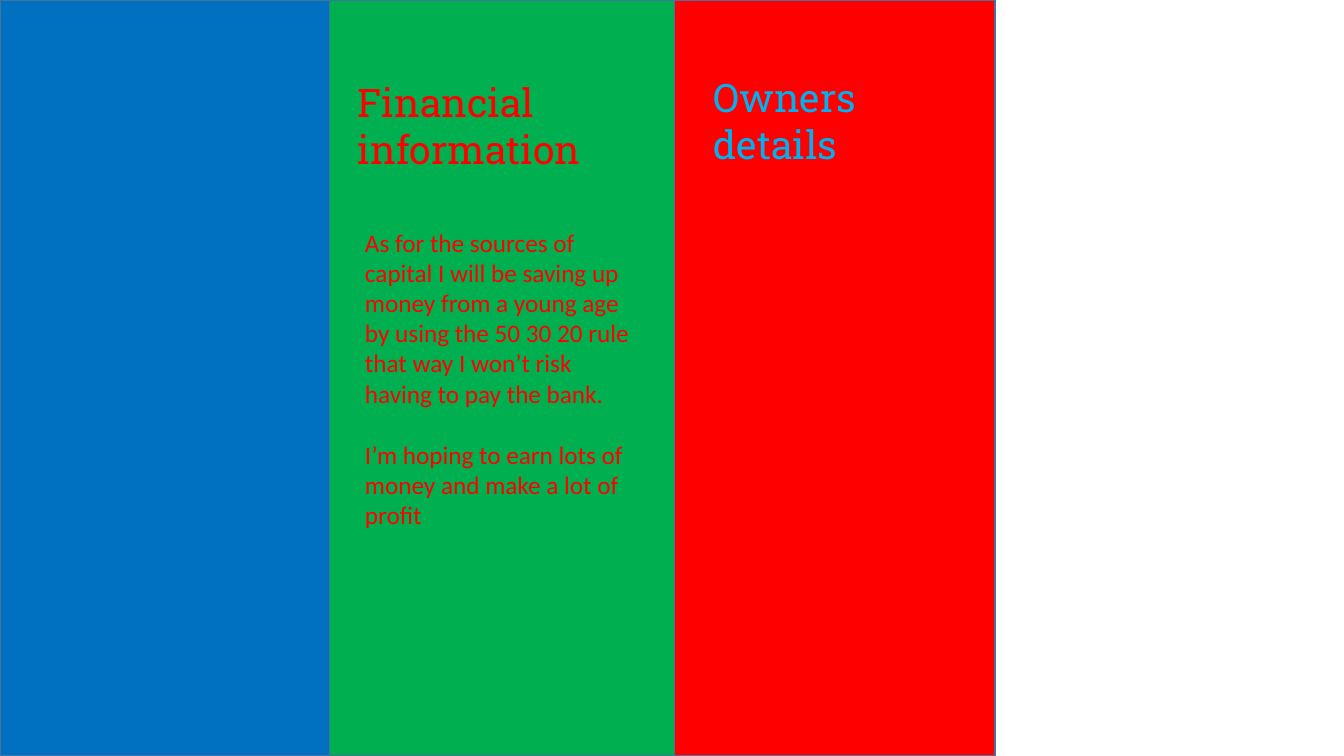
import pptx
import pptx.dml.color
import pptx.enum.shapes
import pptx.enum.text
import pptx.util
from lxml import etree
from dataclasses import dataclass

Inches = pptx.util.Inches
Pt = pptx.util.Pt


@dataclass(frozen=True)
class Theme:
    blue: str = "0070C0"
    green: str = "00B050"
    red: str = "FF0000"
    light_blue: str = "00B0F0"
    outline: str = "43739E"
    heading_font: str = "Roboto Slab"
    body_font: str = "Calibri"
    heading_size: int = 28
    body_size: int = 18


THEME = Theme()
PANEL_HEIGHT = 7.5
FINANCE_TEXT = [
    "As for the sources of capital I will be saving up money from a young age "
    "by using the 50 30 20 rule that way I won’t risk having to pay the bank.",
    "I’m hoping to earn lots of money and make a lot of profit",
]


def color(value):
    return pptx.dml.color.RGBColor.from_string(value)


def set_values(target, values):
    for name, value in values.items():
        setattr(target, name, value)


def add_panel(slide, left, width, fill):
    """Draw one full-height column of the leaflet."""
    panel = slide.shapes.add_shape(
        pptx.enum.shapes.MSO_SHAPE.RECTANGLE,
        Inches(left), Inches(0), Inches(width), Inches(PANEL_HEIGHT))
    panel.shadow.inherit = False
    panel.fill.solid()
    panel.fill.fore_color.rgb = color(fill)
    panel.line.color.rgb = color(THEME.outline)
    panel.line.width = Pt(1)


def write_text(shape, box, paragraphs, font, size, fill, gap=0):
    """Place a text shape in its box and write left-aligned paragraphs."""
    set_values(shape, dict(zip(("left", "top", "width", "height"), map(Inches, box))))
    frame = shape.text_frame
    set_values(frame, {
        "word_wrap": True,
        "auto_size": pptx.enum.text.MSO_AUTO_SIZE.NONE,
        "vertical_anchor": pptx.enum.text.MSO_ANCHOR.TOP,
    })
    frame.text = "\n".join(paragraphs)
    for index, paragraph in enumerate(frame.paragraphs):
        set_values(paragraph, {
            "alignment": pptx.enum.text.PP_ALIGN.LEFT,
            "space_before": Pt(gap if index else 0),
        })
        properties = paragraph._p.get_or_add_pPr()
        properties.set("marL", "0")
        properties.set("indent", "0")
        etree.SubElement(properties, pptx.oxml.ns.qn("a:buNone"))
        for run in paragraph.runs:
            set_values(run.font, {"name": font, "size": Pt(size)})
            run.font.color.rgb = color(fill)


def write_heading(shape, box, text, fill):
    write_text(shape, box, [text], THEME.heading_font, THEME.heading_size, fill)


def add_finance_column(slide, left, width):
    """Green column: the slide title and the body text."""
    add_panel(slide, left, width, THEME.green)
    title, body = slide.shapes.title, slide.placeholders[1]
    for placeholder in (title, body):  # bring in front of the panel
        slide.shapes.element.append(placeholder.element)
    write_heading(title, (left + 0.24, 0.73, 3.03, 1.04),
                  "Financial information", THEME.red)
    write_text(body, (left + 0.31, 2.2, 2.84, 3.13), FINANCE_TEXT,
               THEME.body_font, THEME.body_size, THEME.red, gap=22)


def add_owners_column(slide, left, width):
    """Red column: a heading only."""
    add_panel(slide, left, width, THEME.red)
    box = (left + 0.29, 0.68, 2.75, 1.04)
    heading = slide.shapes.add_textbox(*map(Inches, box))
    write_heading(heading, box, "Owners details", THEME.light_blue)


def main():
    presentation = pptx.Presentation()
    presentation.slide_width = Inches(13.33)
    presentation.slide_height = Inches(PANEL_HEIGHT)
    slide = presentation.slides.add_slide(presentation.slide_layouts[1])

    # The blue cover overlaps the edge of the green column
    add_finance_column(slide, 3.21, 3.48)
    add_owners_column(slide, 6.69, 3.18)
    add_panel(slide, 0, 3.27, THEME.blue)

    presentation.save("out.pptx")


if __name__ == "__main__":
    main()
